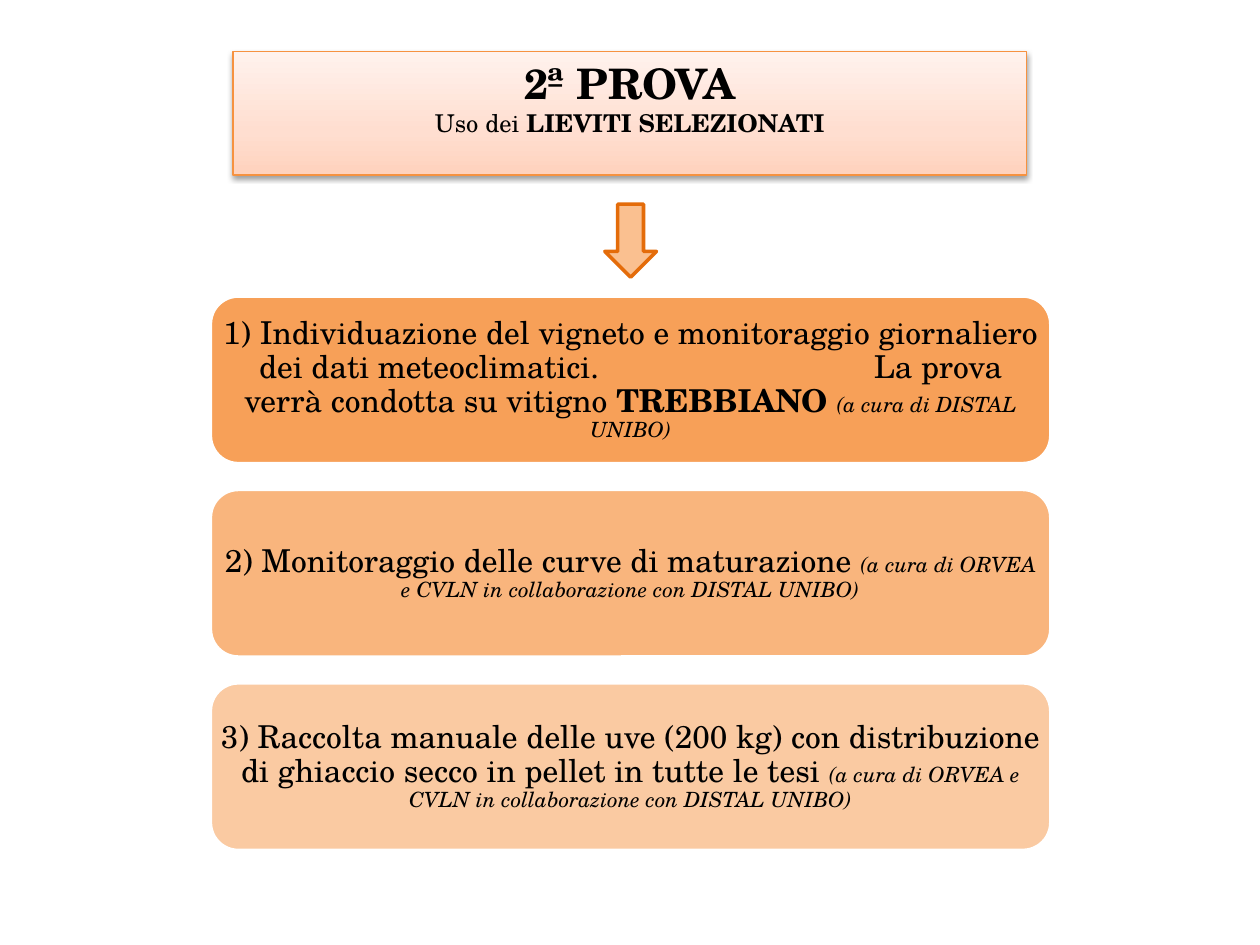
from lxml import etree
from pptx import Presentation
from pptx.dml.color import RGBColor
from pptx.enum.shapes import MSO_SHAPE as Shape
from pptx.enum.text import MSO_ANCHOR as Anchor, PP_ALIGN as Align
from pptx.oxml.ns import qn
from pptx.util import Inches, Pt

FONT = "TeX Gyre Schola"
ORANGE = "F79646"
STEP_LEFT, STEP_TOP, STEP_WIDTH, STEP_HEIGHT = 1.67, 2.35, 6.67, 1.33
STEP_PITCH = 1.535
STEP_INSET = 0.07
TAB_STOP = 4.88

PARTNERS = "(a cura di ORVEA e CVLN in collaborazione con DISTAL UNIBO)"
# Each step: opacity in percent, then runs of (text, size, bold, italic)
STEPS = [
    (90, [("1) Individuazione del vigneto e monitoraggio giornaliero dei dati "
           "meteoclimatici.\tLa prova verrà condotta su vitigno ", 18, False, False),
          ("TREBBIANO ", 18, True, False),
          ("(a cura di DISTAL UNIBO)", 12, False, True)]),
    (70, [("2) Monitoraggio delle curve di maturazione ", 18, False, False),
          (PARTNERS, 12, False, True)]),
    (50, [("3) Raccolta manuale delle uve (200 kg) con distribuzione di ghiaccio "
           "secco in pellet in tutte le tesi ", 18, False, False),
          (PARTNERS, 12, False, True)]),
]


def rgb(color):
    return RGBColor.from_string(color)


def add_child(parent, tag, **attributes):
    return etree.SubElement(parent, qn(tag), {k: str(v) for k, v in attributes.items()})


def add_shape(slide, kind, left, top, width, height, fill, line, line_width):
    shape = slide.shapes.add_shape(
        kind, Inches(left), Inches(top), Inches(width), Inches(height))
    shape.shadow.inherit = False
    shape.fill.solid()
    shape.fill.fore_color.rgb = rgb(fill)
    shape.line.color.rgb = rgb(line)
    shape.line.width = Pt(line_width)
    return shape


def set_gradient(shape, stops):
    """Fill from bottom to top with (percent, color) stops."""
    shape.fill.gradient()
    shape.fill.gradient_angle = 90
    stop_list = shape._element.spPr.find(".//" + qn("a:gsLst"))
    for stop in list(stop_list):
        stop_list.remove(stop)
    for percent, color in stops:
        stop = add_child(stop_list, "a:gs", pos=percent * 1000)
        add_child(stop, "a:srgbClr", val=color)


def set_shadow(shape, color, opacity, blur, distance):
    effects = shape._element.spPr.find(qn("a:effectLst"))
    shadow = add_child(effects, "a:outerShdw", blurRad=Pt(blur), dist=Pt(distance),
                       dir=90 * 60000, rotWithShape=0)
    add_child(add_child(shadow, "a:srgbClr", val=color), "a:alpha", val=opacity * 1000)


def set_opacity(shape, percent):
    color = shape._element.spPr.find(qn("a:solidFill")).find(qn("a:srgbClr"))
    add_child(color, "a:alpha", val=percent * 1000)


def write_runs(paragraph, runs):
    paragraph.alignment = Align.CENTER
    paragraph.font.name = FONT
    paragraph.font.color.rgb = rgb("000000")
    for text, size, bold, italic in runs:
        run = paragraph.add_run()
        run.text = text
        run.font.size = Pt(size)
        run.font.bold = bold
        run.font.italic = italic


def add_title(slide):
    box = add_shape(slide, Shape.RECTANGLE, 1.85, 0.41, 6.3, 0.98,
                    "FFDED0", "F69240", 0.75)
    set_gradient(box, [(0, "FFD2BD"), (35, "FFDED0"), (100, "FFF2ED")])
    set_shadow(box, "000000", 38, 3.1, 1.6)
    frame = box.text_frame
    frame.word_wrap = True
    frame.vertical_anchor = Anchor.TOP
    write_runs(frame.paragraphs[0], [("2ª PROVA", 24, True, False)])
    write_runs(frame.add_paragraph(), [("Uso dei ", 14, False, False),
                                       ("LIEVITI SELEZIONATI", 14, True, False)])


def add_step(slide, top, opacity, runs):
    box = add_shape(slide, Shape.ROUNDED_RECTANGLE, STEP_LEFT, top,
                    STEP_WIDTH, STEP_HEIGHT, ORANGE, "FFFFFF", 2)
    set_opacity(box, opacity)
    frame = box.text_frame
    frame.word_wrap = True
    frame.vertical_anchor = Anchor.MIDDLE
    # A rounded rectangle already insets its text by 0.29 of the corner radius
    inset = Inches(STEP_INSET - 0.29 * box.adjustments[0] * STEP_HEIGHT)
    frame.margin_left = frame.margin_right = inset
    frame.margin_top = frame.margin_bottom = inset
    paragraph = frame.paragraphs[0]
    paragraph.line_spacing = 0.9
    if any("\t" in run[0] for run in runs):
        tabs = add_child(paragraph._p.get_or_add_pPr(), "a:tabLst")
        add_child(tabs, "a:tab", pos=Inches(TAB_STOP), algn="l")
    write_runs(paragraph, runs)


def main():
    presentation = Presentation()
    presentation.slide_width = Inches(10)
    presentation.slide_height = Inches(7.5)
    slide = presentation.slides.add_slide(presentation.slide_layouts[6])
    add_title(slide)
    add_shape(slide, Shape.DOWN_ARROW, 4.8, 1.62, 0.41, 0.58, "FAC090", "E46C0A", 2)
    for index, (opacity, runs) in enumerate(STEPS):
        add_step(slide, STEP_TOP + index * STEP_PITCH, opacity, runs)
    presentation.save("out.pptx")


if __name__ == "__main__":
    main()
